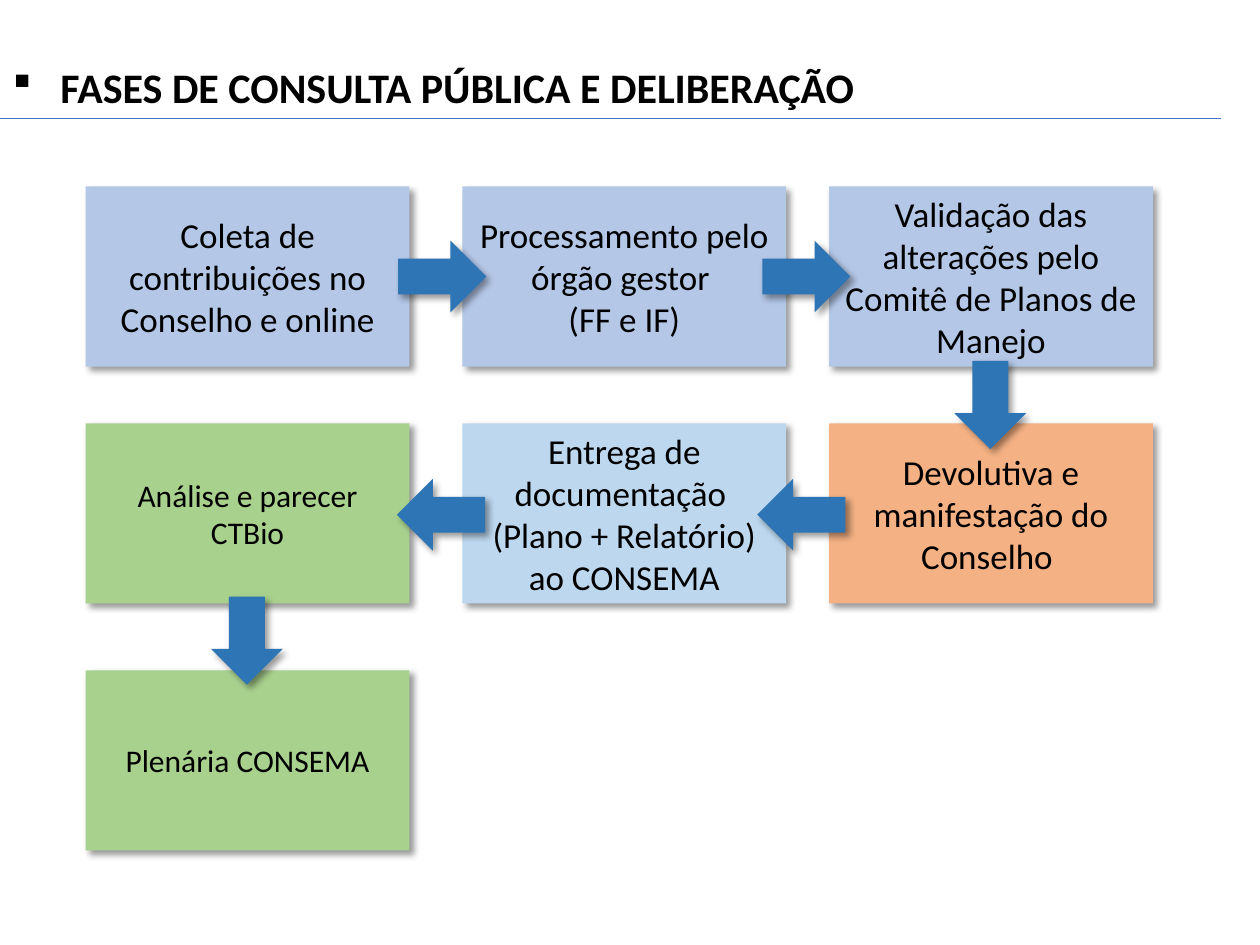
from lxml.etree import SubElement
from pptx import Presentation
from pptx.dml.color import RGBColor
from pptx.enum.shapes import MSO_CONNECTOR, MSO_SHAPE
from pptx.enum.text import MSO_ANCHOR, MSO_AUTO_SIZE, PP_ALIGN
from pptx.oxml.ns import qn
from pptx.util import Inches, Pt

COLUMNS = (0.68, 3.67, 6.58)
ROWS = (1.48, 3.36, 5.32)
STEP_SIZE = (2.57, 1.43)
ARROW_SIZE = (0.7, 0.57)
BLUE, LIGHT_BLUE, ORANGE, GREEN = "B4C7E7", "BDD7EE", "F4B183", "A9D18E"

STEPS = [
    (0, 0, "Coleta de contribuições no Conselho e online", BLUE, 20),
    (1, 0, "Processamento pelo órgão gestor \n(FF e IF)", BLUE, 20),
    (2, 0, "Validação das alterações pelo Comitê de Planos de Manejo", BLUE, 20),
    (2, 1, "Devolutiva e manifestação do Conselho ", ORANGE, 20),
    (1, 1, "Entrega de documentação \n(Plano + Relatório) ao CONSEMA", LIGHT_BLUE, 20),
    (0, 1, "Análise e parecer CTBio", GREEN, 18),
    (0, 2, "Plenária CONSEMA", GREEN, 18),
]
ARROWS = [
    (3.16, 1.91, 0),
    (6.05, 1.91, 0),
    (7.51, 2.93, 90),
    (6.01, 3.8, 180),
    (3.15, 3.8, 180),
    (1.61, 4.8, 90),
]


def color(hex_code):
    return RGBColor.from_string(hex_code)


def format_text(text_frame, size, align, bold=False):
    for paragraph in text_frame.paragraphs:
        paragraph.alignment = align
        for run in paragraph.runs:
            run.font.name = "Calibri"
            run.font.size = Pt(size)
            run.font.bold = bold
            run.font.color.rgb = color("000000")


def add_shadowed(slide, kind, left, top, size, fill):
    shape = slide.shapes.add_shape(
        kind, Inches(left), Inches(top), *map(Inches, size))
    shape.fill.solid()
    shape.fill.fore_color.rgb = color(fill)
    shape.line.fill.background()
    shape.shadow.inherit = False
    effects = shape.element.spPr.find(qn("a:effectLst"))
    shadow = SubElement(effects, qn("a:outerShdw"), blurRad=str(Pt(4)),
                        dist=str(Pt(3)), dir=str(45 * 60000),
                        algn="tl", rotWithShape="0")
    tint = SubElement(shadow, qn("a:srgbClr"), val="000000")
    SubElement(tint, qn("a:alpha"), val="40000")
    return shape


def add_heading(slide, left, top, width, height):
    title = slide.shapes.title
    title.left, title.top = Inches(left), Inches(top)
    title.width, title.height = Inches(width), Inches(height)
    frame = title.text_frame
    frame.text = "FASES DE CONSULTA PÚBLICA E DELIBERAÇÃO"
    frame.auto_size = MSO_AUTO_SIZE.NONE
    frame.vertical_anchor = MSO_ANCHOR.TOP
    format_text(frame, 24, PP_ALIGN.LEFT, bold=True)
    properties = frame.paragraphs[0]._p.get_or_add_pPr()
    properties.set("marL", str(Inches(0.38)))
    properties.set("indent", str(-Inches(0.38)))
    SubElement(properties, qn("a:buFont"), typeface="Wingdings")
    SubElement(properties, qn("a:buChar"), char="§")

    bottom = Inches(top + height)
    rule = slide.shapes.add_connector(
        MSO_CONNECTOR.STRAIGHT, Inches(left), bottom, Inches(left + 9.69), bottom)
    rule.line.color.rgb = color("4472C4")
    rule.line.width = Pt(0.5)
    SubElement(rule._element.spPr, qn("a:effectLst"))


def add_step(slide, left, top, text, fill, size):
    step = add_shadowed(slide, MSO_SHAPE.RECTANGLE, left, top, STEP_SIZE, fill)
    frame = step.text_frame
    frame.text = text
    frame.word_wrap = True
    frame.vertical_anchor = MSO_ANCHOR.MIDDLE
    format_text(frame, size, PP_ALIGN.CENTER)


def add_arrow(slide, left, top, rotation):
    arrow = add_shadowed(
        slide, MSO_SHAPE.RIGHT_ARROW, left, top, ARROW_SIZE, "2E75B6")
    arrow.rotation = rotation


def main():
    deck = Presentation()
    deck.slide_width, deck.slide_height = Inches(10), Inches(7.5)
    slide = deck.slides.add_slide(deck.slide_layouts[5])
    add_heading(slide, 0, 0.44, 10, 0.5)
    for column, row, text, fill, size in STEPS:
        add_step(slide, COLUMNS[column], ROWS[row], text, fill, size)
    for left, top, rotation in ARROWS:
        add_arrow(slide, left, top, rotation)
    deck.save("out.pptx")


if __name__ == "__main__":
    main()
